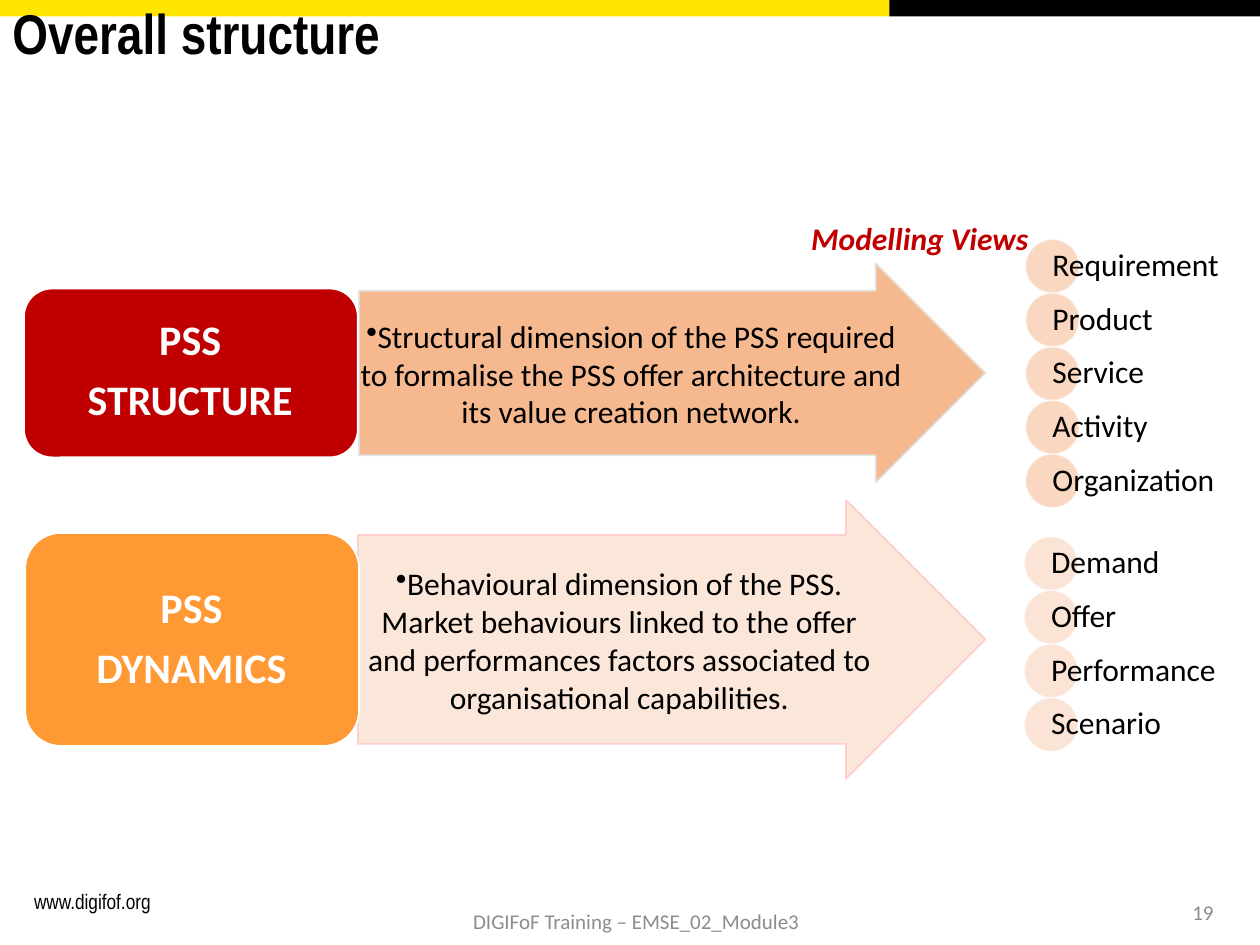
from lxml import etree
from pptx import Presentation
from pptx.dml.color import RGBColor
from pptx.enum.shapes import MSO_SHAPE
from pptx.enum.text import MSO_ANCHOR, PP_ALIGN
from pptx.oxml.ns import qn
from pptx.util import Inches, Pt

RECTANGLE, ROUNDED = MSO_SHAPE.RECTANGLE, MSO_SHAPE.ROUNDED_RECTANGLE
ARROW, OVAL = MSO_SHAPE.RIGHT_ARROW, MSO_SHAPE.OVAL
TOP, MIDDLE = MSO_ANCHOR.TOP, MSO_ANCHOR.MIDDLE
LEFT, CENTER, RIGHT = PP_ALIGN.LEFT, PP_ALIGN.CENTER, PP_ALIGN.RIGHT

BLACK, WHITE = RGBColor(0, 0, 0), RGBColor(255, 255, 255)
YELLOW = RGBColor(0xFF, 0xE5, 0x00)
RED = RGBColor(0xC0, 0x00, 0x00)
ORANGE = RGBColor(0xFF, 0x99, 0x33)
GREY = RGBColor(0x8C, 0x8C, 0x8C)
SILVER = RGBColor(0xE1, 0xE1, 0xE1)
PINK = RGBColor(0xFF, 0xCB, 0xCB)
APRICOT = RGBColor(0xF4, 0xB1, 0x83)
PEACH = RGBColor(0xF8, 0xCB, 0xAD)
CREAM = RGBColor(0xFB, 0xE5, 0xD6)

COLUMNS, ROWS = 100, 75
VIEW_STEP = 4.26

# label, colour, box, box text, arrow colour, arrow outline, arrow, arrow text, description
DIMENSIONS = [
    (["PSS", "STRUCTURE"], RED, (1.9, 22.9, 26.5, 13.4), (2.5, 23.5, 25.2, 12.1),
     APRICOT, SILVER, (28.5, 20.9, 49.7, 17.4), (28.5, 23.1, 43.2, 13.1),
     "Structural dimension of the PSS required to formalise the PSS offer "
     "architecture and its value creation network."),
    (["PSS", "DYNAMICS"], ORANGE, (2, 42.3, 26.5, 16.9), (2.8, 43.2, 24.8, 15.2),
     CREAM, PINK, (28.4, 39.7, 49.8, 22.1), (28.4, 42.5, 41.5, 16.6),
     "Behavioural dimension of the PSS. Market behaviours linked to the offer and "
     "performances factors associated to organisational capabilities."),
]
VIEWS = [
    (81.4, 19, APRICOT, ["Requirement", "Product", "Service", "Activity", "Organization"]),
    (81.3, 42.6, PEACH, ["Demand", "Offer", "Performance", "Scenario"]),
]


class SlideBuilder:
    """Draws on one slide; boxes are (column, row, columns wide, rows high)."""
    body_font, narrow_font = "Calibri", "Arial Narrow"

    def __init__(self, presentation):
        self.cell_width = presentation.slide_width / COLUMNS
        self.cell_height = presentation.slide_height / ROWS
        self.slide = presentation.slides.add_slide(presentation.slide_layouts[6])

    def place(self, box):
        units = (self.cell_width, self.cell_height) * 2
        return [round(value * unit) for value, unit in zip(box, units)]

    def set_opacity(self, fill, percent):
        for color in fill._xPr.iter(qn("a:srgbClr")):
            etree.SubElement(color, qn("a:alpha"), val=str(percent * 1000))

    def shape(self, kind, box, color, outline=None, opacity=100):
        shape = self.slide.shapes.add_shape(kind, *self.place(box))
        shape.shadow.inherit = False
        shape.fill.solid()
        shape.fill.fore_color.rgb = color
        if outline is None:
            shape.line.fill.background()
        else:
            shape.line.color.rgb = outline
            shape.line.width = Pt(1)
        if opacity < 100:
            self.set_opacity(shape.fill, opacity)
        return shape

    def text(self, box, lines, size=18, color=BLACK, align=LEFT, anchor=MIDDLE,
             margins=(0.1, 0.05), spacing=1.0, after=0, bullet=False, wrap=True, **font):
        frame = self.slide.shapes.add_textbox(*self.place(box)).text_frame
        across, down = map(Inches, margins)
        layout = {"word_wrap": wrap, "vertical_anchor": anchor,
                  "margin_left": across, "margin_right": across,
                  "margin_top": down, "margin_bottom": down}
        for name, value in layout.items():
            setattr(frame, name, value)
        style = {"name": self.body_font, "size": Pt(size), **font}
        for index, line in enumerate(lines):
            paragraph = frame.paragraphs[0] if index == 0 else frame.add_paragraph()
            paragraph.alignment, paragraph.line_spacing = align, spacing
            paragraph.space_after = Pt(after)
            if bullet:
                properties = paragraph._p.get_or_add_pPr()
                properties.set("marL", "0")
                properties.set("indent", "0")
                etree.SubElement(properties, qn("a:buChar"), char="•")
            run = paragraph.add_run()
            run.text = line
            for name, value in style.items():
                setattr(run.font, name, value)
            run.font.color.rgb = color

    def dimension(self, label, color, box, label_box, arrow_color, outline,
                  arrow_box, description_box, description):
        arrow = self.shape(ARROW, arrow_box, arrow_color, outline, opacity=90)
        arrow.adjustments[0], arrow.adjustments[1] = 0.75, 0.5
        self.set_opacity(arrow.line.fill, 90)
        self.text(description_box, [description], align=CENTER,
                  margins=(0.01, 0.01), bullet=True)
        self.shape(ROUNDED, box, color, WHITE)
        self.text(label_box, label, size=24, color=WHITE, align=CENTER,
                  spacing=0.9, after=8.4, bold=True)

    def views(self, column, row, color, names):
        """Stacks circles, with each name starting at its circle's centre."""
        for index, name in enumerate(names):
            top = row + index * VIEW_STEP
            self.shape(OVAL, (column, top, VIEW_STEP, VIEW_STEP), color, WHITE, opacity=50)
            self.text((column + VIEW_STEP / 2, top, 16, VIEW_STEP), [name],
                      margins=(0, 0.03), spacing=0.9)


def main():
    presentation = Presentation()
    presentation.slide_width, presentation.slide_height = Inches(10), Inches(7.5)
    builder = SlideBuilder(presentation)

    builder.shape(RECTANGLE, (0, 0, 70.6, 1.3), YELLOW)
    builder.shape(RECTANGLE, (70.6, 0, 29.4, 1.3), BLACK)
    builder.text((2, 70.1, 21.9, 3), ["www.digifof.org"], size=12, anchor=TOP,
                 margins=(0.07, 0.04), name=builder.narrow_font)
    builder.text((0, 0, 63.7, 14.5), ["Overall structure"], size=32, anchor=TOP,
                 spacing=0.9, name=builder.narrow_font, bold=True)
    builder.text((74.8, 70.4, 22.5, 4), ["19"], size=12, color=GREY, align=RIGHT)

    for dimension in DIMENSIONS:
        builder.dimension(*dimension)
    for group in VIEWS:
        builder.views(*group)
    builder.text((63.4, 16.9, 19.4, 4), ["Modelling Views"], color=RED, anchor=TOP,
                 wrap=False, bold=True, italic=True)
    builder.text((28, 71.1, 45, 4), ["DIGIFoF Training – EMSE_02_Module3"], size=12,
                 color=GREY, align=CENTER)

    presentation.save("out.pptx")


if __name__ == "__main__":
    main()
